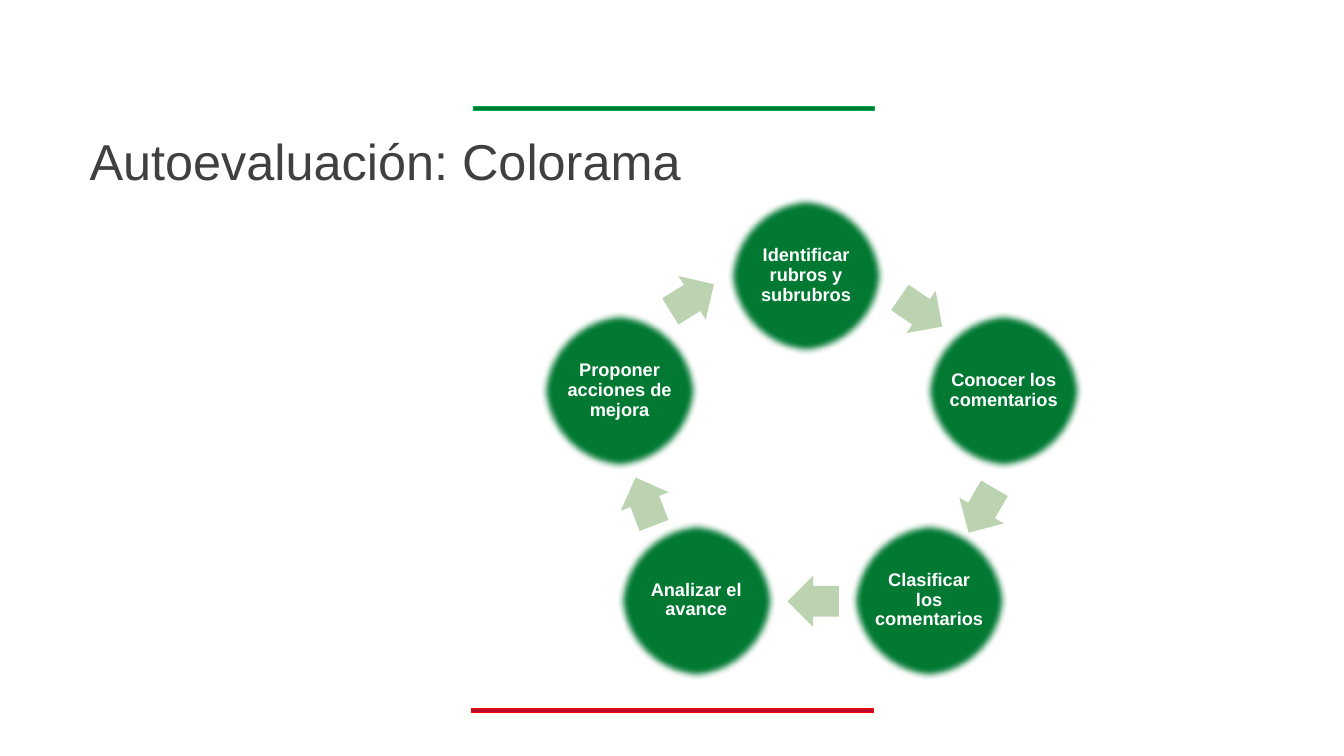
import lxml.etree
import pptx
import pptx.dml.color
import pptx.enum.shapes
import pptx.enum.text
import pptx.oxml.ns
import pptx.util

Inches = pptx.util.Inches
Pt = pptx.util.Pt
SHAPES = pptx.enum.shapes.MSO_SHAPE
ANCHOR = pptx.enum.text.MSO_ANCHOR
ALIGN = pptx.enum.text.PP_ALIGN

GREEN = "007A33"
WHITE = "FFFFFF"
CIRCLE_SIZE = 1.57
ARROW_SIZE = 0.51


def color(hex_string):
    return pptx.dml.color.RGBColor.from_string(hex_string)


def add_filled_shape(kind, left, top, width, height, fill, line=None, line_width=1):
    shape = slide.shapes.add_shape(
        kind, Inches(left), Inches(top), Inches(width), Inches(height))
    shape.shadow.inherit = False
    shape.fill.solid()
    shape.fill.fore_color.rgb = color(fill)
    if line:
        shape.line.color.rgb = color(line)
        shape.line.width = Pt(line_width)
    else:
        shape.line.fill.background()
    return shape


presentation = pptx.Presentation()
presentation.slide_width = Inches(13.33)
presentation.slide_height = Inches(7.5)
slide = presentation.slides.add_slide(presentation.slide_layouts[6])

# Red and green bars
for left, top, fill, line in [(4.68, 7.03, "BA0C2F", "FF0000"),
                              (4.69, 1.06, GREEN, "00B050")]:
    add_filled_shape(SHAPES.RECTANGLE, left, top, 3.98, 0.04, fill, line, 0.5)

# Title
title = slide.shapes.add_textbox(Inches(0.79), Inches(1.31), Inches(7.09), Inches(0.62))
title.text_frame.word_wrap = True
paragraph = title.text_frame.paragraphs[0]
paragraph.line_spacing = 0.9
run = paragraph.add_run()
run.text = "Autoevaluación: Colorama"
run.font.name = "Arial"
run.font.size = Pt(36)
run.font.color.rgb = color("404040")

# Cycle: each step's circle, then the arrow that leads to the next step
# (text, circle left, circle top, arrow left, arrow top, arrow rotation)
steps = [
    ("Identificar rubros y subrubros", 7.21, 1.95, 8.88, 2.84, 34.6),
    ("Conocer los comentarios", 9.17, 3.09, 9.48, 4.81, 120.2),
    ("Clasificar los comentarios", 8.43, 5.17, 7.81, 5.71, 180),
    ("Analizar el avance", 6.12, 5.17, 6.14, 4.72, 249),
    ("Proponer acciones de mejora", 5.36, 3.09, 6.61, 2.7, 328.1),
]
for text, circle_left, circle_top, arrow_left, arrow_top, rotation in steps:
    circle = add_filled_shape(SHAPES.OVAL, circle_left, circle_top,
                              CIRCLE_SIZE, CIRCLE_SIZE, GREEN, WHITE)
    effects = circle._element.spPr.find(pptx.oxml.ns.qn("a:effectLst"))
    lxml.etree.SubElement(effects, pptx.oxml.ns.qn("a:softEdge"), rad="63500")

    frame = circle.text_frame
    frame.word_wrap = True
    frame.vertical_anchor = ANCHOR.MIDDLE
    frame.margin_left = frame.margin_right = Inches(0)
    frame.margin_top = frame.margin_bottom = Inches(0.02)
    paragraph = frame.paragraphs[0]
    paragraph.alignment = ALIGN.CENTER
    paragraph.line_spacing = 0.9
    run = paragraph.add_run()
    run.text = text
    run.font.name = "Arial"
    run.font.size = Pt(13)
    run.font.bold = True
    run.font.color.rgb = color(WHITE)

    arrow = add_filled_shape(SHAPES.RIGHT_ARROW, arrow_left, arrow_top,
                             ARROW_SIZE, ARROW_SIZE, "BBD3B1")
    arrow.adjustments[0] = 0.6
    arrow.adjustments[1] = 0.5
    arrow.rotation = rotation

presentation.save("out.pptx")
